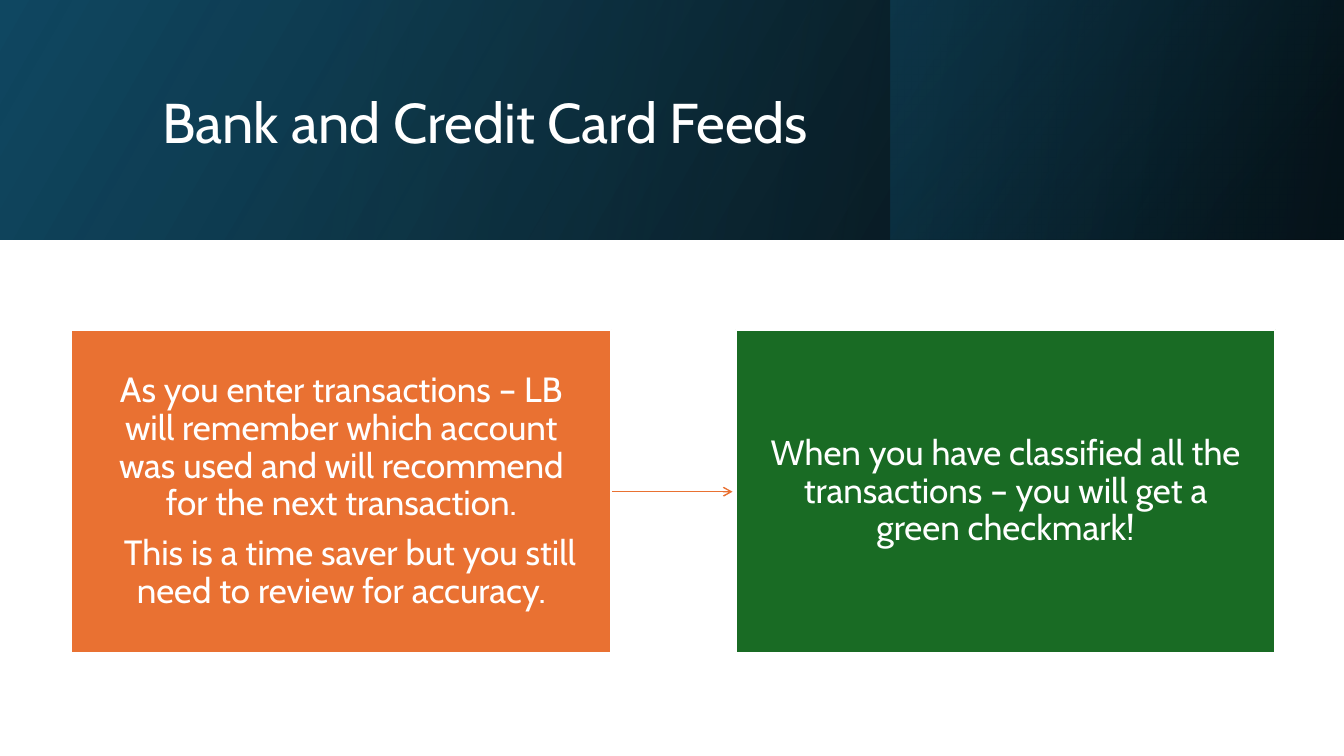
from lxml import etree
from pptx import Presentation
from pptx.dml.color import RGBColor
from pptx.enum.shapes import MSO_CONNECTOR, MSO_SHAPE
from pptx.enum.text import MSO_ANCHOR, PP_ALIGN
from pptx.oxml.ns import qn
from pptx.util import Cm, Pt

WHITE = RGBColor(0xFF, 0xFF, 0xFF)
BLACK = RGBColor(0x00, 0x00, 0x00)
OCEAN = RGBColor(0x10, 0x48, 0x62)
DEEP = RGBColor(0x0B, 0x30, 0x41)
TEAL = RGBColor(0x15, 0x60, 0x82)
ORANGE = RGBColor(0xE9, 0x71, 0x32)
GREEN = RGBColor(0x19, 0x6B, 0x24)
FONT = "Cabin"

TITLE = "Bank and Credit Card Feeds"
STEPS = [
    (ORANGE, [
        ("As you enter transactions – LB will remember which account was used "
         "and will recommend for the next transaction.", 0),
        ("This is a time saver but you still need to review for accuracy.", 0.43),
    ]),
    (GREEN, [
        ("When you have classified all the transactions – you will get a "
         "green checkmark!", 0),
    ]),
]

SLIDE_W, SLIDE_H = 33.87, 19.05
BANNER_H = 6.03
PANEL_LEFT = 22.45
BANNER_LAYERS = [
    (0, 150, [(0, BLACK, 96), (1, OCEAN, 100)]),
    (PANEL_LEFT, 140, [(0.19, DEEP, 68), (1, TEAL, 48)]),
    (0, 350, [(0.23, OCEAN, 16), (0.99, BLACK, 45)]),
]
STEP_LEFT, STEP_TOP, STEP_W, STEP_H = 1.8, 8.31, 13.6, 8.16
STEP_PITCH = 16.74
ARROW_INSET = 0.08

deck = Presentation()
deck.slide_width, deck.slide_height = Cm(SLIDE_W), Cm(SLIDE_H)
slide = deck.slides.add_slide(deck.slide_layouts[6])


def add_box(left, top, width, height):
    box = slide.shapes.add_shape(
        MSO_SHAPE.RECTANGLE, Cm(left), Cm(top), Cm(width), Cm(height))
    box.shadow.inherit = False
    return box


def add_run(paragraph, words, size):
    paragraph.line_spacing = 0.9
    run = paragraph.add_run()
    run.text = words
    run.font.name = FONT
    run.font.size = Pt(size)
    run.font.color.rgb = WHITE


def add_banner_layer(left, angle, stops):
    layer = add_box(left, 0, SLIDE_W - left, BANNER_H)
    layer.line.fill.background()
    layer.fill.gradient()
    layer.fill.gradient_angle = angle
    for stop, (position, color, _) in zip(layer.fill.gradient_stops, stops):
        stop.position = position
        stop.color.rgb = color
    colors = layer._element.spPr.iter(qn("a:srgbClr"))
    for color, (_, _, opacity) in zip(list(colors), stops):
        etree.SubElement(color, qn("a:alpha")).set("val", str(opacity * 1000))


def add_step(left, color, paragraphs):
    step = add_box(left, STEP_TOP, STEP_W, STEP_H)
    step.fill.solid()
    step.fill.fore_color.rgb = color
    step.line.color.rgb = WHITE
    step.line.width = Pt(1.5)
    frame = step.text_frame
    frame.word_wrap = True
    frame.vertical_anchor = MSO_ANCHOR.MIDDLE
    frame.margin_left = frame.margin_right = Cm(0.66)
    frame.margin_top = frame.margin_bottom = Cm(0.71)
    for index, (words, indent) in enumerate(paragraphs):
        paragraph = frame.add_paragraph() if index else frame.paragraphs[0]
        paragraph.alignment = PP_ALIGN.CENTER
        paragraph.space_after = Pt(8.75)
        paragraph._p.get_or_add_pPr().set("indent", str(Cm(indent)))
        add_run(paragraph, words, 25)


def add_arrow(start, end, y):
    arrow = slide.shapes.add_connector(
        MSO_CONNECTOR.STRAIGHT, Cm(start), Cm(y), Cm(end), Cm(y))
    arrow.line.color.rgb = ORANGE
    arrow.line.width = Pt(1)
    etree.SubElement(arrow.line._get_or_add_ln(), qn("a:tailEnd")).set("type", "arrow")
    etree.SubElement(arrow._element.spPr, qn("a:effectLst"))


for banner_layer in BANNER_LAYERS:
    add_banner_layer(*banner_layer)

title = slide.shapes.add_textbox(Cm(3.84), Cm(0.97), Cm(27), Cm(4.37))
title.text_frame.word_wrap = True
title.text_frame.vertical_anchor = MSO_ANCHOR.MIDDLE
add_run(title.text_frame.paragraphs[0], TITLE, 40)

add_arrow(STEP_LEFT + STEP_W, STEP_LEFT + STEP_PITCH - ARROW_INSET,
          STEP_TOP + STEP_H / 2)
for number, (step_color, step_paragraphs) in enumerate(STEPS):
    add_step(STEP_LEFT + number * STEP_PITCH, step_color, step_paragraphs)

deck.save("out.pptx")
